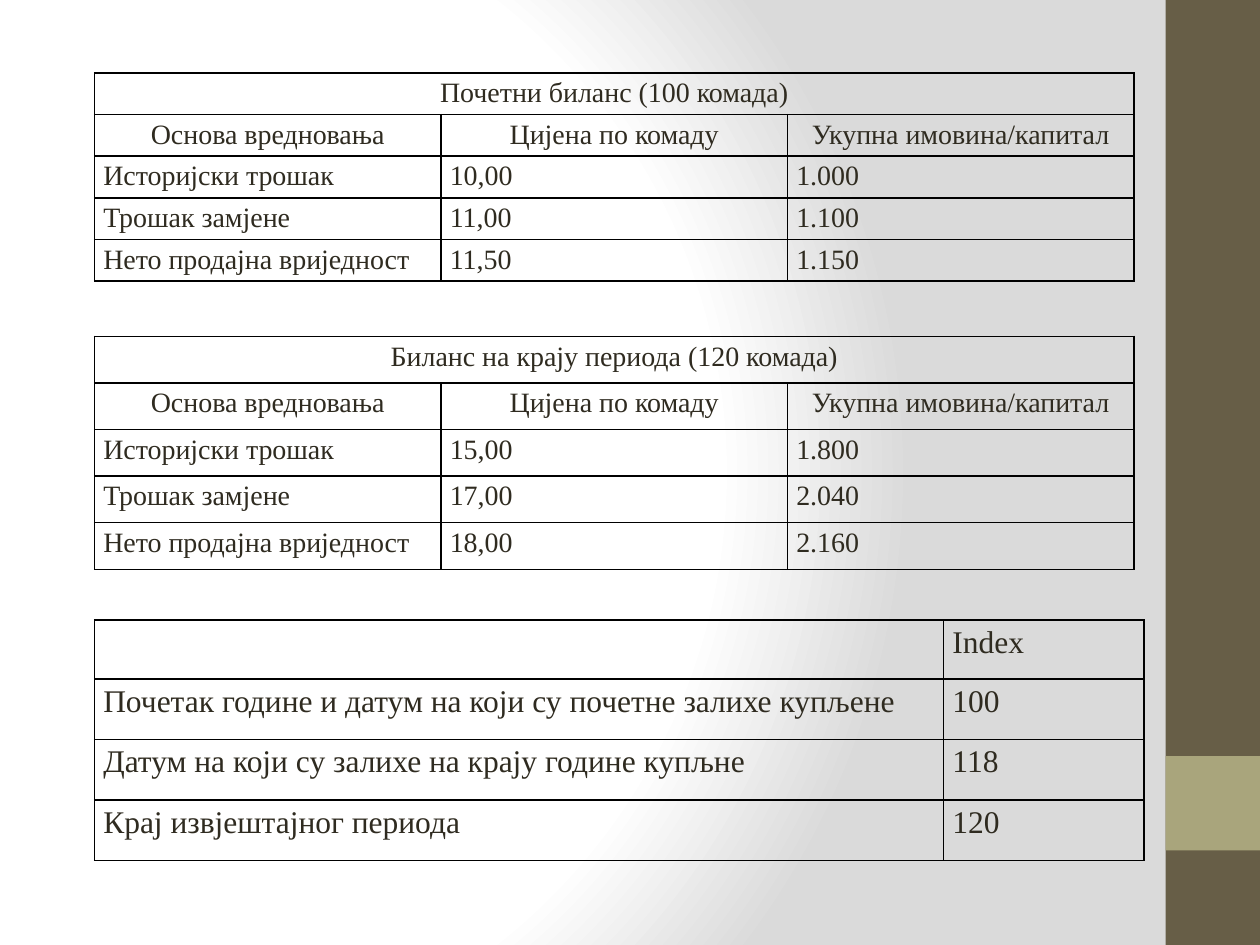
import pptx
import pptx.dml.color
import pptx.enum.shapes
import pptx.enum.text
import pptx.oxml
import pptx.oxml.ns
import pptx.util
from pptx.util import Inches

COLORS = {"text": "2F2B20", "border": "000000", "band": "675E47",
          "accent": "A9A57C", "light": "FFFFFF", "shade": "DADADA"}
FONT = "Times New Roman"
LEFT = 0.75
HEADINGS = ["Основа вредновања", "Цијена по комаду", "Укупна имовина/капитал"]
BASES = ["Историјски трошак", "Трошак замјене", "Нето продајна вриједност"]
INDEX_ROWS = [
    ["", "Index"],
    ["Почетак године и датум на који су почетне залихе купљене", "100"],
    ["Датум на који су залихе на крају године купљне", "118"],
    ["Крај извјештајног периода", "120"],
]


def set_background(slide):
    """Give the slide a circular gradient from white to grey."""
    slide.background.fill.solid()
    solid = slide.element.find(".//" + pptx.oxml.ns.qn("p:bgPr"))[0]
    stops = "".join(
        f'<a:gs pos="{position}"><a:srgbClr val="{COLORS[name]}"/></a:gs>'
        for position, name in [(0, "light"), (75000, "light"), (100000, "shade")])
    gradient = pptx.oxml.parse_xml(
        f'<a:gradFill {pptx.oxml.ns.nsdecls("a")} rotWithShape="1"><a:gsLst>{stops}</a:gsLst>'
        '<a:path path="circle"><a:fillToRect l="20000" t="50000" r="100000" b="50000"/>'
        '</a:path></a:gradFill>')
    solid.getparent().replace(solid, gradient)


def add_band(slide, top, height, color):
    """Add a plain rectangle on the right edge of the slide."""
    shape = slide.shapes.add_shape(
        pptx.enum.shapes.MSO_SHAPE.RECTANGLE,
        Inches(9.25), Inches(top), Inches(0.75), Inches(height))
    shape.shadow.inherit = False
    shape.fill.solid()
    shape.fill.fore_color.rgb = pptx.dml.color.RGBColor.from_string(COLORS[color])
    shape.line.fill.background()


def format_cell(cell):
    """Set the margins, the thin borders and the empty fill of a cell."""
    cell.margin_left = cell.margin_right = Inches(0.07)
    cell.margin_top = cell.margin_bottom = 0
    properties = cell._tc.get_or_add_tcPr()
    for side in ("lnL", "lnR", "lnT", "lnB"):
        properties.append(pptx.oxml.parse_xml(
            f'<a:{side} {pptx.oxml.ns.nsdecls("a")} w="12700"><a:solidFill>'
            f'<a:srgbClr val="{COLORS["border"]}"/></a:solidFill></a:{side}>'))
    cell.fill.background()


def write_cell(cell, text, size, alignment):
    """Write one run of text into a cell."""
    paragraph = cell.text_frame.paragraphs[0]
    paragraph.alignment = alignment
    paragraph.line_spacing = 1.15
    paragraph.space_after = pptx.util.Pt(6)
    run = paragraph.add_run()
    run.text = text
    run.font.name = FONT
    run.font.size = pptx.util.Pt(size)
    run.font.color.rgb = pptx.dml.color.RGBColor.from_string(COLORS["text"])


def add_grid(slide, top, widths, heights, rows, size, centered_rows=0):
    """Add a bordered table; a row with a single text spans all columns."""
    table = slide.shapes.add_table(
        len(rows), len(widths), Inches(LEFT), Inches(top),
        Inches(sum(widths)), Inches(sum(heights))).table
    table.first_row = table.horz_banding = False
    for column, width in zip(table.columns, widths):
        column.width = Inches(width)
    for row, height in zip(table.rows, heights):
        row.height = Inches(height)
    for cell in table.iter_cells():
        format_cell(cell)
    align = pptx.enum.text.PP_ALIGN
    for row_index, texts in enumerate(rows):
        if len(texts) == 1:
            table.cell(row_index, 0).merge(table.cell(row_index, len(widths) - 1))
        alignment = align.CENTER if row_index < centered_rows else align.JUSTIFY
        for column_index, text in enumerate(texts):
            if text:
                write_cell(table.cell(row_index, column_index), text, size, alignment)


def add_balance(slide, top, row_height, title, prices, totals):
    """Add a balance table with a title row and a heading row."""
    rows = [[title], HEADINGS] + [list(row) for row in zip(BASES, prices, totals)]
    add_grid(slide, top, [2.75] * 3, [row_height] * len(rows), rows, 16, centered_rows=2)


def main():
    """Build the slide and save it."""
    presentation = pptx.Presentation()
    presentation.slide_width = Inches(10)
    presentation.slide_height = Inches(7.5)
    slide = presentation.slides.add_slide(presentation.slide_layouts[6])
    set_background(slide)
    add_band(slide, 0, 7.5, "band")
    add_band(slide, 6, 0.75, "accent")
    add_balance(slide, 0.58, 0.33, "Почетни биланс (100 комада)",
                ["10,00", "11,00", "11,50"], ["1.000", "1.100", "1.150"])
    add_balance(slide, 2.67, 0.37, "Биланс на крају периода (120 комада)",
                ["15,00", "17,00", "18,00"], ["1.800", "2.040", "2.160"])
    add_grid(slide, 4.92, [6.74, 1.59], [0.47] + [0.48] * 3, INDEX_ROWS, 18)
    presentation.save("out.pptx")


if __name__ == "__main__":
    main()
